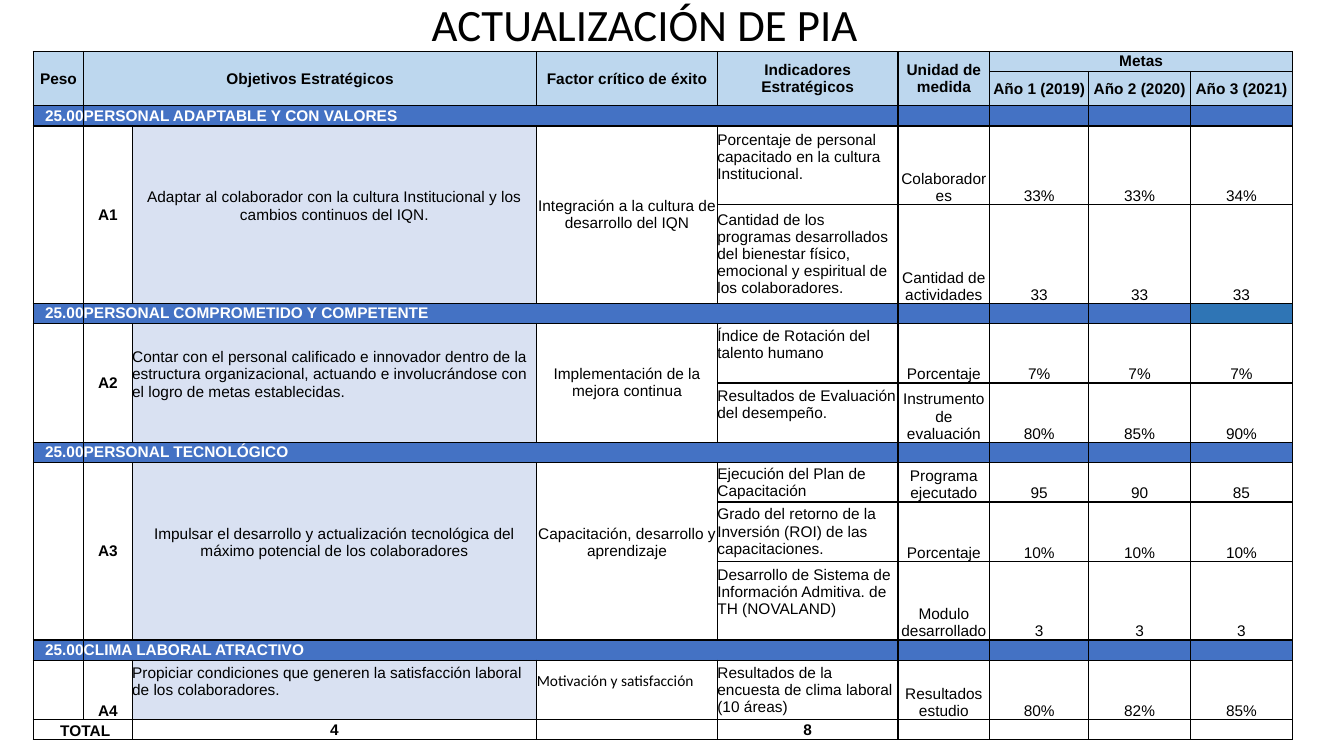
import copy
import collections
import pptx
import pptx.util
import pptx.dml.color
import pptx.enum.text
import pptx.oxml
import pptx.oxml.ns
import lxml.etree

Inches = pptx.util.Inches
Align = pptx.enum.text.PP_ALIGN
Anchor = pptx.enum.text.MSO_ANCHOR
qn = pptx.oxml.ns.qn


class Theme:
    black = "000000"
    white = "FFFFFF"
    head = "BDD7EE"
    band = "4472C4"
    deep = "2F75B5"
    pale = "D9E1F2"
    font = "Arial"
    alt = "Calibri"
    size = 11
    title = 32
    edge = 1
    line = 0.17


Goal = collections.namedtuple("Goal", "name code aim side factor align font tail rows")

WIDTHS = [0.5, 0.48, 4.01, 1.79, 1.79, 0.91, 0.98, 1.01, 1.01]
HEADS = ["Peso", "Objetivos Estratégicos", None, "Factor crítico de éxito",
         "Indicadores Estratégicos", "Unidad de medida"]
YEARS = ["Año 1 (2019)", "Año 2 (2020)", "Año 3 (2021)"]
GOALS = [
    Goal("PERSONAL ADAPTABLE Y CON VALORES", "A1",
         "Adaptar al colaborador con la cultura Institucional y los cambios continuos del IQN.",
         Align.CENTER, "Integración a la cultura de desarrollo del IQN", Align.CENTER, Theme.font, 0, [
             (0.78, "Porcentaje de personal capacitado en la cultura Institucional.", 1,
              "Colaboradores", "33%", "33%", "34%"),
             (0.98, "Cantidad de los programas desarrollados del bienestar físico, "
              "emocional y espiritual de los colaboradores.", 0,
              "Cantidad de actividades", "33", "33", "33")]),
    Goal("PERSONAL COMPROMETIDO Y COMPETENTE", "A2",
         "Contar con el personal calificado e innovador dentro de la estructura organizacional, "
         "actuando e involucrándose con el logro de metas establecidas.",
         Align.LEFT, "Implementación de la mejora continua", Align.CENTER, Theme.font, 0, [
             (0.59, "Índice de Rotación del talento humano", 1, "Porcentaje", "7%", "7%", "7%"),
             (0.59, "Resultados de Evaluación del desempeño.", 1,
              "Instrumento de evaluación", "80%", "85%", "90%")]),
    Goal("PERSONAL TECNOLÓGICO", "A3",
         "Impulsar el desarrollo y actualización tecnológica del máximo potencial de los colaboradores",
         Align.CENTER, "Capacitación, desarrollo y aprendizaje", Align.CENTER, Theme.font, 1, [
             (0.39, "Ejecución del Plan de Capacitación", 0, "Programa ejecutado", "95", "90", "85"),
             (0.59, "Grado del retorno de la Inversión (ROI) de las capacitaciones.", 0,
              "Porcentaje", "10%", "10%", "10%"),
             (0.78, "Desarrollo de Sistema de Información Admitiva. de TH (NOVALAND)", 1,
              "Modulo desarrollado", "3", "3", "3")]),
    Goal("CLIMA LABORAL ATRACTIVO", "A4",
         "Propiciar condiciones que generen la satisfacción laboral de los colaboradores.",
         Align.LEFT, "Motivación y satisfacción", Align.LEFT, Theme.alt, 1, [
             (0.59, "Resultados de la encuesta de clima laboral (10 áreas)", 0,
              "Resultados estudio", "80%", "82%", "85%")]),
]


def write(frame, text, size=Theme.size, font=Theme.font, color=Theme.black,
          bold=False, align=Align.CENTER):
    frame.word_wrap = True
    para = frame.paragraphs[0]
    para.alignment = align
    run = para.add_run()
    run.text = text
    run.font.size = pptx.util.Pt(size)
    run.font.name = font
    run.font.bold = bold
    run.font.color.rgb = pptx.dml.color.RGBColor.from_string(color)
    if not text:
        end = copy.deepcopy(run.font._element)
        end.tag = qn("a:endParaRPr")
        para._p.remove(run._r)
        para._p.append(end)


def rule(cell):
    props = cell._tc.get_or_add_tcPr()
    for spot, side in enumerate(["a:lnL", "a:lnR", "a:lnT", "a:lnB"]):
        line = lxml.etree.Element(qn(side), w=str(pptx.util.Pt(Theme.edge)))
        fill = lxml.etree.SubElement(line, qn("a:solidFill"))
        lxml.etree.SubElement(fill, qn("a:srgbClr"), val=Theme.black)
        props.insert(spot, line)


def put(cell, text="", fill=Theme.white, anchor=Anchor.MIDDLE, tail=0, left=0, **style):
    cell.margin_left = Inches(left)
    cell.margin_right = cell.margin_top = 0
    cell.margin_bottom = Inches(Theme.line * tail)
    cell.vertical_anchor = anchor
    cell.fill.solid()
    cell.fill.fore_color.rgb = pptx.dml.color.RGBColor.from_string(fill)
    rule(cell)
    write(cell.text_frame, text, **style)


def draw_head(grid):
    for col, text in enumerate(HEADS + ["Metas", None, None]):
        put(grid.cell(0, col), text or "", Theme.head, bold=True)
    for col, text in enumerate([""] * len(HEADS) + YEARS):
        put(grid.cell(1, col), text, Theme.head, bold=True)
    for col in (0, 3, 4, 5):
        grid.cell(0, col).merge(grid.cell(1, col))
    grid.cell(0, 1).merge(grid.cell(1, 2))
    grid.cell(0, 6).merge(grid.cell(0, 8))


def draw_goal(grid, top, goal):
    bar = {"color": Theme.white, "bold": True}
    put(grid.cell(top, 0), "25.00", Theme.band, align=Align.RIGHT, **bar)
    put(grid.cell(top, 1), goal.name, Theme.band, align=Align.LEFT, **bar)
    for col in range(2, 9):
        deep = goal.code == "A2" and col == 8
        put(grid.cell(top, col), fill=Theme.deep if deep else Theme.band)
    grid.cell(top, 1).merge(grid.cell(top, 4))

    first, last = top + 1, top + len(goal.rows)
    for row, (_, text, tail, *marks) in enumerate(goal.rows, first):
        lead = row == first
        put(grid.cell(row, 0))
        put(grid.cell(row, 1), goal.code if lead else "", bold=True,
            anchor=Anchor.BOTTOM if first == last else Anchor.MIDDLE)
        put(grid.cell(row, 2), goal.aim if lead else "", Theme.pale, tail=1, align=goal.side)
        put(grid.cell(row, 3), goal.factor if lead else "", tail=goal.tail,
            align=goal.align, font=goal.font)
        put(grid.cell(row, 4), text, tail=tail, align=Align.LEFT)
        for col, mark in enumerate(marks, 5):
            put(grid.cell(row, col), mark, anchor=Anchor.BOTTOM)
    if last > first:
        for col in range(4):
            grid.cell(first, col).merge(grid.cell(last, col))


def draw_sum(grid, row):
    for col, text in enumerate(["TOTAL", "", "4", "", "8", "", "", "", ""]):
        put(grid.cell(row, col), text, bold=True, left=0 if col else 0.05,
            anchor=Anchor.MIDDLE if col else Anchor.BOTTOM)
    grid.cell(row, 0).merge(grid.cell(row, 1))


def draw_grid(slide, left, top, width):
    tall = [0.2, 0.34]
    for goal in GOALS:
        tall += [0.2] + [row[0] for row in goal.rows]
    tall.append(0.2)
    grid = slide.shapes.add_table(len(tall), len(WIDTHS), Inches(left), Inches(top),
                                  Inches(width), Inches(sum(tall))).table
    grid.first_row = grid.horz_banding = False
    for col, wide in zip(grid.columns, WIDTHS):
        col.width = Inches(wide * width / sum(WIDTHS))
    for row, high in zip(grid.rows, tall):
        row.height = Inches(high)
    draw_head(grid)
    top = 2
    for goal in GOALS:
        draw_goal(grid, top, goal)
        top += 1 + len(goal.rows)
    draw_sum(grid, top)


def draw_title(slide, left, top, width, height):
    title = slide.shapes.title
    title.left, title.top = Inches(left), Inches(top)
    title.width, title.height = Inches(width), Inches(height)
    title.text_frame.vertical_anchor = Anchor.MIDDLE
    write(title.text_frame, "ACTUALIZACIÓN DE PIA", size=Theme.title, font=Theme.alt)


def main():
    deck = pptx.Presentation()
    deck.slide_width, deck.slide_height = Inches(13.33), Inches(7.5)
    slide = deck.slides.add_slide(deck.slide_layouts[5])
    draw_grid(slide, 0.33, 0.51, 12.49)
    draw_title(slide, 2.35, -0.09, 8.09, 0.64)
    deck.save("out.pptx")


if __name__ == "__main__":
    main()
